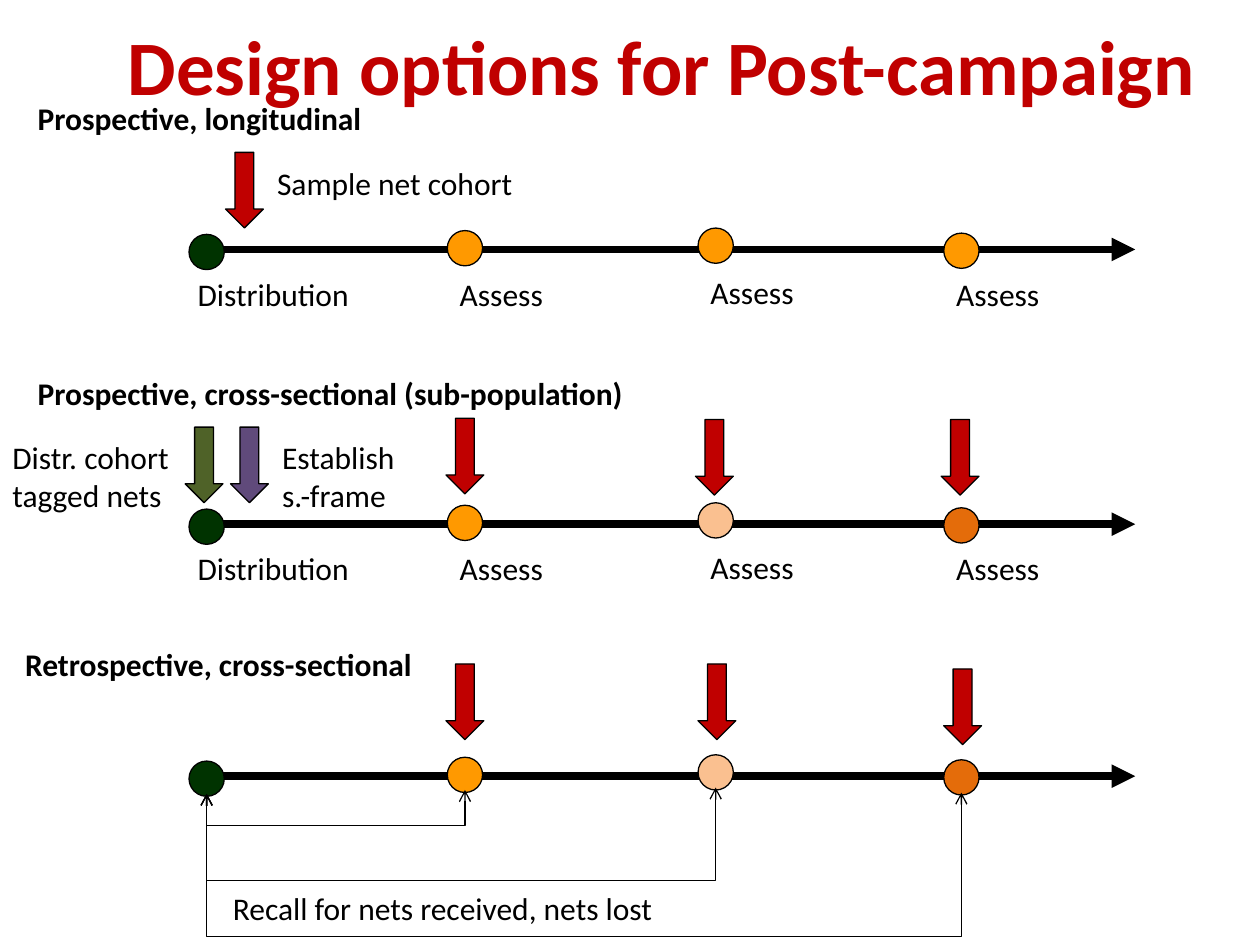
from dataclasses import dataclass

from lxml import etree
from pptx import Presentation
from pptx.dml.color import RGBColor
from pptx.enum.shapes import MSO_CONNECTOR, MSO_SHAPE
from pptx.enum.text import MSO_ANCHOR, MSO_AUTO_SIZE, PP_ALIGN
from pptx.oxml.ns import qn
from pptx.util import Inches, Pt

STRAIGHT, ELBOW = MSO_CONNECTOR.STRAIGHT, MSO_CONNECTOR.ELBOW
OVAL, DOWN_ARROW = MSO_SHAPE.OVAL, MSO_SHAPE.DOWN_ARROW
MIDDLE, NO_FIT = MSO_ANCHOR.MIDDLE, MSO_AUTO_SIZE.NONE
LEFT, CENTER = PP_ALIGN.LEFT, PP_ALIGN.CENTER


@dataclass(frozen=True)
class Theme:
    font: str = "Calibri"
    title_size: int = 44
    body_size: int = 18
    thin: float = 0.75
    thick: float = 4.5
    black: str = "000000"
    red: str = "C00000"
    start: str = "003300"
    amber: str = "FF9900"
    peach: str = "FAC090"
    orange: str = "E46C0A"
    olive: str = "4F6228"
    purple: str = "604A7B"


THEME = Theme()
SAME_COHORT = [THEME.amber] * 3
NEW_SAMPLES = [THEME.amber, THEME.peach, THEME.orange]

START_COLUMN = 1.5
ASSESS_COLUMNS = [3.55, 5.54, 7.49]
DOT = 0.28
DOT_RISES = [0.15, 0.17, 0.13]
START_RISE = 0.12
LABEL_DROPS = [0.15, 0.14, 0.15]
ARROW_WIDTH, ARROW_HEIGHT = 0.3, 0.6
LINE_HEIGHT = 0.4
ROWS = [1.98, 4.16, 6.16]


def write(frame, text, size=THEME.body_size, color=THEME.black, bold=False, align=LEFT):
    frame.word_wrap = True
    frame.auto_size = NO_FIT
    para = frame.paragraphs[0]
    para.alignment = align
    for index, line in enumerate(text.split("\n")):
        if index:
            para.add_line_break()
        span = para.add_run()
        span.text = line
        span.font.name = THEME.font
        span.font.size = Pt(size)
        span.font.bold = bold
        span.font.color.rgb = RGBColor.from_string(color)


def add_text(page, text, left, top, width, height=LINE_HEIGHT, **style):
    box = page.shapes.add_textbox(*map(Inches, (left, top, width, height)))
    write(box.text_frame, text, **style)


def add_title(page, text):
    title = page.shapes.title
    title.left, title.top, title.width, title.height = map(Inches, (0.6, 0.03, 9.31, 0.96))
    title.text_frame.vertical_anchor = MIDDLE
    write(title.text_frame, text, size=THEME.title_size, color=THEME.red,
          bold=True, align=CENTER)


def add_figure(page, kind, left, top, width, height, color):
    figure = page.shapes.add_shape(kind, *map(Inches, (left, top, width, height)))
    figure.shadow.inherit = False
    figure.fill.solid()
    figure.fill.fore_color.rgb = RGBColor.from_string(color)
    figure.line.color.rgb = RGBColor.from_string(THEME.black)
    figure.line.width = Pt(THEME.thin)


def add_dot(page, left, top, color):
    add_figure(page, OVAL, left, top, DOT, DOT, color)


def add_arrow(page, left, top, color=THEME.red):
    add_figure(page, DOWN_ARROW, left, top, ARROW_WIDTH, ARROW_HEIGHT, color)


def add_line(page, kind, begin, end, weight, **ends):
    line = page.shapes.add_connector(kind, *map(Inches, (*begin, *end)))
    line.line.color.rgb = RGBColor.from_string(THEME.black)
    line.line.width = Pt(weight)
    outline = line.line._get_or_add_ln()
    for name, shape in ends.items():
        etree.SubElement(outline, qn(f"a:{name}"), type=shape)
    etree.SubElement(line.element.spPr, qn("a:effectLst"))
    return line


def add_recall(page, begin, end, bend):
    across, drop = begin[0] - end[0], end[1] - begin[1]
    middle_x, middle_y = (begin[0] + end[0]) / 2, (begin[1] + end[1]) / 2
    line = add_line(page, ELBOW,
                    (middle_x - drop / 2, middle_y - across / 2),
                    (middle_x + drop / 2, middle_y + across / 2),
                    THEME.thin, headEnd="arrow", tailEnd="arrow")
    properties = line.element.spPr
    properties.find(qn("a:xfrm")).set("rot", str(90 * 60000))
    guides = properties.find(qn("a:prstGeom")).get_or_add_avLst()
    share = round((bend - begin[1]) / drop * 100000)
    etree.SubElement(guides, qn("a:gd"), name="adj1", fmla=f"val {share}")


def add_timeline(page, row, colors):
    add_line(page, STRAIGHT, (1.62, row), (9.01, row), THEME.thick, tailEnd="triangle")
    add_dot(page, START_COLUMN, row - START_RISE, THEME.start)
    for column, rise, color in zip(ASSESS_COLUMNS, DOT_RISES, colors):
        add_dot(page, column, row - rise, color)


def add_labels(page, row):
    add_text(page, "Distribution", 1.47, row + LABEL_DROPS[0], 1.52)
    for column, drop in zip(ASSESS_COLUMNS, LABEL_DROPS):
        add_text(page, "Assess", column, row + drop, 1.12)


def add_longitudinal(page, row):
    add_timeline(page, row, SAME_COHORT)
    add_labels(page, row)
    add_arrow(page, 1.79, 1.21)
    add_text(page, "Prospective, longitudinal", 0.2, 0.74, 5.47, bold=True)
    add_text(page, "Sample net cohort", 2.1, 1.25, 3.22)


def add_sub_population(page, row):
    add_timeline(page, row, NEW_SAMPLES)
    add_labels(page, row)
    add_text(page, "Prospective, cross-sectional (sub-population)", 0.2, 2.92, 5.47, bold=True)
    add_text(page, "Distr. cohort\ntagged nets", 0, 3.43, 1.61, 0.71)
    add_text(page, "Establish\ns.-frame", 2.14, 3.43, 1.4, 0.71)
    add_arrow(page, 1.47, 3.39, THEME.olive)
    add_arrow(page, 1.83, 3.39, THEME.purple)
    for left, top in [(3.54, 3.32), (5.52, 3.33), (7.47, 3.33)]:
        add_arrow(page, left, top)


def add_retrospective(page, row):
    add_timeline(page, row, NEW_SAMPLES)
    add_text(page, "Retrospective, cross-sectional", 0.1, 5.07, 3.48, bold=True)
    for left, top in [(3.54, 5.27), (5.54, 5.27), (7.49, 5.31)]:
        add_arrow(page, left, top)
    start = (START_COLUMN + DOT / 2, row + 0.14)
    bends = [6.55, 6.99, 7.45]
    for column, rise, bend in zip(ASSESS_COLUMNS, DOT_RISES, bends):
        add_recall(page, (column + DOT / 2, row - rise + DOT - 0.02), start, bend)
    add_text(page, "Recall for nets received, nets lost", 1.75, 7.01, 5.84)


def main():
    deck = Presentation()
    deck.slide_width, deck.slide_height = Inches(10), Inches(7.5)
    page = deck.slides.add_slide(deck.slide_layouts[5])
    add_title(page, "Design options for Post-campaign")
    for add_design, row in zip((add_longitudinal, add_sub_population, add_retrospective), ROWS):
        add_design(page, row)
    deck.save("out.pptx")


if __name__ == "__main__":
    main()
